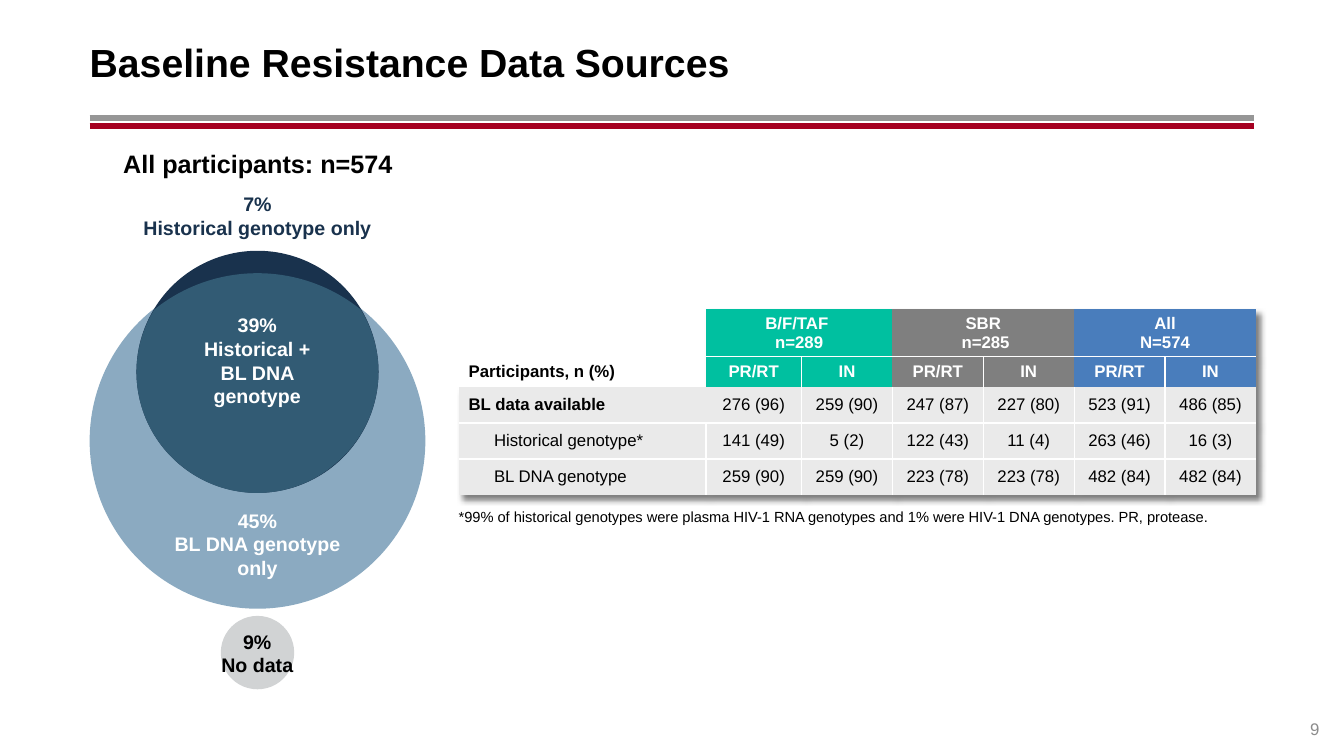
from lxml.etree import SubElement
from pptx import Presentation
from pptx.dml.color import RGBColor
from pptx.enum.shapes import MSO_CONNECTOR, MSO_SHAPE
from pptx.enum.text import MSO_ANCHOR, PP_ALIGN
from pptx.oxml import parse_xml
from pptx.oxml.ns import nsdecls, qn
from pptx.util import Cm, Pt

HUES = {
    "black": "000000", "white": "FFFFFF", "gray": "969696", "red": "A50021",
    "page": "8C8C8C", "pale": "8BAAC1", "navy": "19324D", "none": "D1D3D4",
    "both": "325B74", "green": "00C0A0", "mid": "7F7F7F", "blue": "497DBC",
    "band": "EAEAEA",
}
GROUPS = [("B/F/TAF \nn=289", "green"), ("SBR\n n=285", "mid"), ("All\nN=574", "blue")]
ROWS = [
    ("BL data available", "276 (96)", "259 (90)", "247 (87)", "227 (80)", "523 (91)", "486 (85)"),
    ("Historical genotype*", "141 (49)", "5 (2)", "122 (43)", "11 (4)", "263 (46)", "16 (3)"),
    ("BL DNA genotype", "259 (90)", "259 (90)", "223 (78)", "223 (78)", "482 (84)", "482 (84)"),
]
MID = 6.49
LENS = [
    (3.89, 7.8),
    (5.41, 6.58), (7.57, 6.58), (9.09, 7.8),
    (9.88, 9.07), (9.6, 10.72), (8.46, 11.68),
    (7.32, 12.67), (5.64, 12.67), (4.5, 11.68),
    (3.38, 10.72), (3.1, 9.07), (3.89, 7.8),
]
CENTER, LEFT, RIGHT = PP_ALIGN.CENTER, PP_ALIGN.LEFT, PP_ALIGN.RIGHT


def color(name):
    return RGBColor.from_string(HUES[name])


def style(frame, text, size, hue, bold=False, align=CENTER):
    frame.text = text
    for para in frame.paragraphs:
        para.alignment = align
        for run in para.runs:
            font = run.font
            font.name, font.size, font.bold = "Arial", Pt(size), bold
            font.color.rgb = color(hue)
        if not para.runs:
            SubElement(para._p, qn("a:endParaRPr"), sz=str(size * 100))


def inset(frame, side, edge):
    frame.margin_left = frame.margin_right = Cm(side)
    frame.margin_top = frame.margin_bottom = Cm(edge)


def add_title(slide, text):
    title = slide.shapes.title
    title.left, title.top = Cm(2.26), Cm(0.46)
    title.width, title.height = Cm(29.34), Cm(2.18)
    frame = title.text_frame
    inset(frame, 0, 0.13)
    frame.vertical_anchor = MSO_ANCHOR.MIDDLE
    style(frame, text, 28, "black", True, LEFT)


def add_label(slide, box, text, size, hue, bold=True, align=CENTER, wrap=True):
    frame = slide.shapes.add_textbox(*[Cm(v) for v in box]).text_frame
    inset(frame, 0, 0)
    frame.word_wrap = wrap
    frame.vertical_anchor = MSO_ANCHOR.BOTTOM
    style(frame, text, size, hue, bold, align)
    return frame


def add_rule(slide, top, hue):
    rule = slide.shapes.add_connector(
        MSO_CONNECTOR.STRAIGHT, Cm(2.26), Cm(top), Cm(31.6), Cm(top))
    rule.line.color.rgb = color(hue)
    rule.line.width = Pt(4.25)
    SubElement(rule._element.spPr, qn("a:effectLst"))


def paint(shape, hue):
    shape.shadow.inherit = False
    shape.fill.solid()
    shape.fill.fore_color.rgb = color(hue)
    shape.line.fill.background()


def add_disc(slide, top, size, hue):
    disc = slide.shapes.add_shape(
        MSO_SHAPE.OVAL, Cm(MID - size / 2), Cm(top), Cm(size), Cm(size))
    paint(disc, hue)


def add_lens(slide, hue):
    points = [(Cm(x), Cm(y)) for x, y in LENS]
    build = slide.shapes.build_freeform(*points[0])
    build.add_line_segments(points[1:], close=True)
    lens = build.convert_to_shape()
    lines = list(lens._element.iter(qn("a:lnTo")))
    for i in range(0, len(lines), 3):
        curve = lines[i].makeelement(qn("a:cubicBezTo"))
        lines[i].addprevious(curve)
        for line in lines[i:i + 3]:
            curve.append(line[0])
            line.getparent().remove(line)
    paint(lens, hue)


def add_edge(cell, tag, shown):
    fill = f'<a:solidFill><a:srgbClr val="{HUES["white"]}"/></a:solidFill>' if shown else "<a:noFill/>"
    cell._tc.get_or_add_tcPr().append(parse_xml(
        f'<a:{tag} {nsdecls("a")} w="12700">{fill}</a:{tag}>'))


def fill_cell(cell, text, hue, ink="black", bold=False, align=CENTER):
    inset(cell, 0.25, 0.09)
    cell.vertical_anchor = MSO_ANCHOR.MIDDLE
    if hue:
        cell.fill.solid()
        cell.fill.fore_color.rgb = color(hue)
    else:
        cell.fill.background()
    style(cell.text_frame, text, 12, ink, bold, align)


def add_grid(slide):
    wide = [0.64, 5.59, 2.41] + [2.29] * 5
    tall = [1.14, 0.76] + [0.91] * 3
    grid = slide.shapes.add_table(
        len(tall), len(wide), Cm(11.56), Cm(7.79), Cm(sum(wide)), Cm(sum(tall))).table
    grid.first_row = grid.horz_banding = False
    props = grid._tbl.tblPr
    props.find(qn("a:tableStyleId")).text = "{2D5ABB26-0587-4C30-8999-92F81FD0307C}"
    props.insert(0, parse_xml(
        f'<a:effectLst {nsdecls("a")}><a:outerShdw blurRad="50800" dist="50800" dir="2700000" '
        'algn="tl" rotWithShape="0"><a:srgbClr val="000000"><a:alpha val="50000"/></a:srgbClr>'
        '</a:outerShdw></a:effectLst>'))
    for col, size in zip(grid.columns, wide):
        col.width = Cm(size)
    for row, size in zip(grid.rows, tall):
        row.height = Cm(size)
    for r in range(len(tall)):
        for c in range(len(wide)):
            cell = grid.cell(r, c)
            inner = c in (2, 4, 6) and r == 1
            add_edge(cell, "lnR", inner or (r > 1 and 0 < c < 7))
            add_edge(cell, "lnB", r in (2, 3) or (r == 0 and c > 1))
    for r in range(3):
        grid.cell(r, 0).merge(grid.cell(r, 1))
    for c in (0, 1):
        fill_cell(grid.cell(0, c), "", None)
    fill_cell(grid.cell(1, 0), "Participants, n (%)", None, bold=True, align=LEFT)
    for i, (head, hue) in enumerate(GROUPS):
        c = 2 + 2 * i
        grid.cell(0, c).merge(grid.cell(0, c + 1))
        fill_cell(grid.cell(0, c), head, hue, "white", True)
        for k, name in enumerate(("PR/RT", "IN")):
            fill_cell(grid.cell(1, c + k), name, hue, "white", True)
    for r, (name, *vals) in enumerate(ROWS, 2):
        main_row = r == 2
        if not main_row:
            fill_cell(grid.cell(r, 0), "", "band")
        fill_cell(grid.cell(r, 0 if main_row else 1), name, "band", bold=main_row, align=LEFT)
        for c, val in enumerate(vals, 2):
            fill_cell(grid.cell(r, c), val, "band")


def main():
    deck = Presentation()
    deck.slide_width, deck.slide_height = Cm(33.87), Cm(19.05)
    slide = deck.slides.add_slide(deck.slide_layouts[5])
    add_rule(slide, 2.97, "gray")
    add_rule(slide, 3.18, "red")
    add_title(slide, "Baseline Resistance Data Sources")
    add_label(slide, (31.6, 17.6, 1.65, 1.02), "9", 12, "page", False, RIGHT)
    add_grid(slide)
    add_disc(slide, 6.88, 8.46, "pale")
    add_disc(slide, 6.32, 6.1, "navy")
    add_disc(slide, 15.52, 1.85, "none")
    add_lens(slide, "both")
    add_label(slide, (4.77, 7.88, 3.43, 2.39), "39%\vHistorical + BL DNA genotype", 14, "white")
    add_label(slide, (4.05, 12.8, 4.88, 1.8), "45%\vBL DNA genotype\vonly", 14, "white")
    add_label(slide, (2.26, 4.84, 8.46, 1.19), "7%\nHistorical genotype only", 14, "navy")
    add_label(slide, (5.57, 15.86, 1.83, 1.19), "9%\nNo data", 14, "black", wrap=False)
    total = add_label(slide, (2.7, 3.33, 7.6, 1.3), "All participants: n=574", 18, "black", wrap=False)
    inset(total, 0.25, 0.13)
    add_label(slide, (11.56, 12.55, 19.66, 0.69),
              "*99% of historical genotypes were plasma HIV-1 RNA genotypes and 1% were "
              "HIV-1 DNA genotypes. PR, protease.", 10.5, "black", False, LEFT)
    deck.save("out.pptx")


if __name__ == "__main__":
    main()
